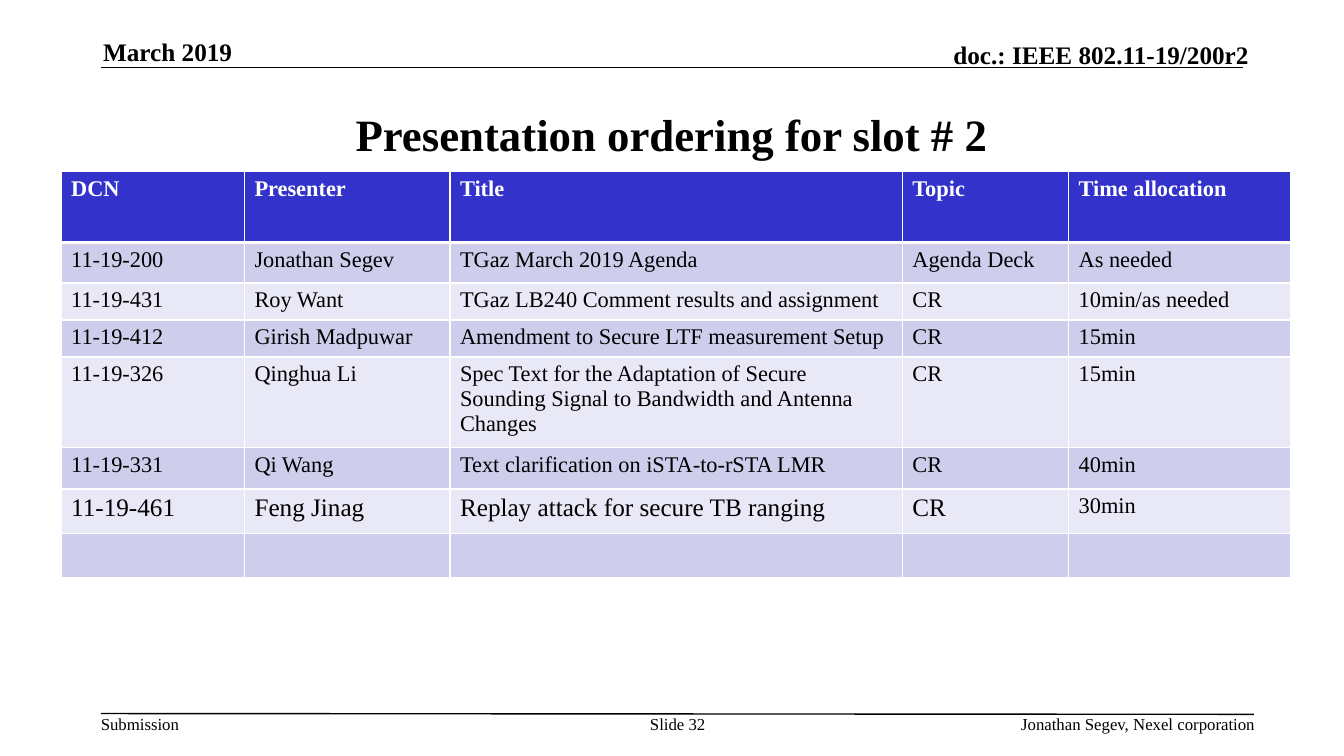
from lxml.etree import SubElement
from pptx import Presentation
from pptx.dml.color import RGBColor
from pptx.enum.shapes import MSO_CONNECTOR
from pptx.enum.text import MSO_ANCHOR as Anchor, PP_ALIGN as Align
from pptx.oxml.ns import qn
from pptx.util import Cm, Pt

BLACK = RGBColor(0x00, 0x00, 0x00)
WHITE = RGBColor(0xFF, 0xFF, 0xFF)
HEADER_BLUE = RGBColor(0x33, 0x33, 0xCC)
BAND_DARK = RGBColor(0xCE, 0xCE, 0xEC)
BAND_LIGHT = RGBColor(0xE8, 0xE8, 0xF6)
FONT = "Times New Roman"

COLUMN_WIDTHS = [4.62, 5.18, 11.4, 4.19, 5.59]
ROW_HEIGHTS = [1.78, 1.02, 0.88, 0.88, 2.14, 1.04, 1.12, 1.12]
AGENDA = [
    ["DCN", "Presenter", "Title", "Topic", "Time allocation"],
    ["11-19-200", "Jonathan Segev", "TGaz March 2019 Agenda", "Agenda Deck", "As needed"],
    ["11-19-431", "Roy Want", "TGaz LB240 Comment results and assignment", "CR", "10min/as needed"],
    ["11-19-412", "Girish Madpuwar", "Amendment to Secure LTF measurement Setup", "CR", "15min"],
    ["11-19-326", "Qinghua Li",
     "Spec Text for the Adaptation of Secure Sounding Signal to Bandwidth and Antenna Changes",
     "CR", "15min"],
    ["11-19-331", "Qi Wang", "Text clarification on iSTA-to-rSTA LMR", "CR", "40min"],
    ["11-19-461", "Feng Jinag", "Replay attack for secure TB ranging", "CR", "30min"],
    [""] * 5,
]
LARGE_ROW = 6
TIME_COLUMN = 4


def write(frame, text, size, color=BLACK, bold=False, align=Align.LEFT):
    frame.text = text
    para = frame.paragraphs[0]
    para.alignment = align
    for span in para.runs:
        span.font.name = FONT
        span.font.size = Pt(size)
        span.font.bold = bold
        span.font.color.rgb = color


def place(shape, left, top, width, height):
    shape.left, shape.top = Cm(left), Cm(top)
    shape.width, shape.height = Cm(width), Cm(height)


def add_title(page, text):
    title = page.shapes.title
    place(title, 2.54, 1.9, 28.78, 2.95)
    write(title.text_frame, text, 32, bold=True, align=Align.CENTER)
    title.text_frame.vertical_anchor = Anchor.MIDDLE


def add_label(page, text, left, top, width, size, align=Align.LEFT,
              bold=False, anchor=Anchor.TOP, height=0.51):
    box = page.shapes.add_textbox(Cm(left), Cm(top), Cm(width), Cm(height))
    frame = box.text_frame
    frame.word_wrap = True
    frame.margin_left = frame.margin_right = frame.margin_top = frame.margin_bottom = 0
    frame.vertical_anchor = anchor
    write(frame, text, size, bold=bold, align=align)


def add_rule(page, top, right, end_top):
    rule = page.shapes.add_connector(
        MSO_CONNECTOR.STRAIGHT, Cm(2.54), Cm(top), Cm(right), Cm(end_top))
    rule.line.color.rgb = BLACK
    rule.line.width = Pt(1)
    SubElement(rule._element.spPr, qn("a:effectLst"))


def set_borders(cell, top, bottom):
    properties = cell._tc.get_or_add_tcPr()
    for side, width in {"lnL": 1, "lnR": 1, "lnT": top, "lnB": bottom}.items():
        line = SubElement(properties, qn(f"a:{side}"), w=str(Pt(width)))
        fill = SubElement(line, qn("a:solidFill"))
        SubElement(fill, qn("a:srgbClr"), val=str(WHITE))


def format_cell(cell, text, row, column):
    header = row == 0
    large = row == LARGE_ROW and column != TIME_COLUMN
    write(cell.text_frame, text, 18 if large else 16, WHITE if header else BLACK, bold=header)
    set_borders(cell, 3 if row == 1 else 1, 3 if header else 1)
    cell.fill.solid()
    cell.fill.fore_color.rgb = HEADER_BLUE if header else BAND_DARK if row % 2 else BAND_LIGHT


def add_agenda(page):
    table = page.shapes.add_table(
        len(AGENDA), len(COLUMN_WIDTHS), Cm(1.54), Cm(4.33),
        Cm(sum(COLUMN_WIDTHS)), Cm(sum(ROW_HEIGHTS))).table
    table.horz_banding = False
    for column, width in zip(table.columns, COLUMN_WIDTHS):
        column.width = Cm(width)
    for row, height in zip(table.rows, ROW_HEIGHTS):
        row.height = Cm(height)
    for row, texts in enumerate(AGENDA):
        for column, text in enumerate(texts):
            format_cell(table.cell(row, column), text, row, column)


def main():
    deck = Presentation()
    deck.slide_width, deck.slide_height = Cm(33.87), Cm(19.05)
    page = deck.slides.add_slide(deck.slide_layouts[5])
    add_rule(page, 1.7, 31.32, 1.7)
    add_rule(page, 17.98, 31.6, 18)
    add_title(page, "Presentation ordering for slot # 2")
    add_label(page, "March 2019", 2.6, 0.92, 6.93, 18,
              bold=True, anchor=Anchor.BOTTOM, height=0.76)
    add_label(page, "doc.: IEEE 802.11-19/200r2", 18.52, 0.99, 12.95, 18, Align.RIGHT,
              bold=True, anchor=Anchor.BOTTOM, height=0.76)
    add_label(page, "Submission", 2.54, 17.98, 2.1, 12)
    add_label(page, "Slide 32", 16.1, 17.98, 1.96, 12, Align.CENTER)
    add_label(page, "Jonathan Segev, Nexel corporation", 19.84, 17.98, 11.79, 12, Align.RIGHT)
    add_agenda(page)
    deck.save("out.pptx")


if __name__ == "__main__":
    main()
